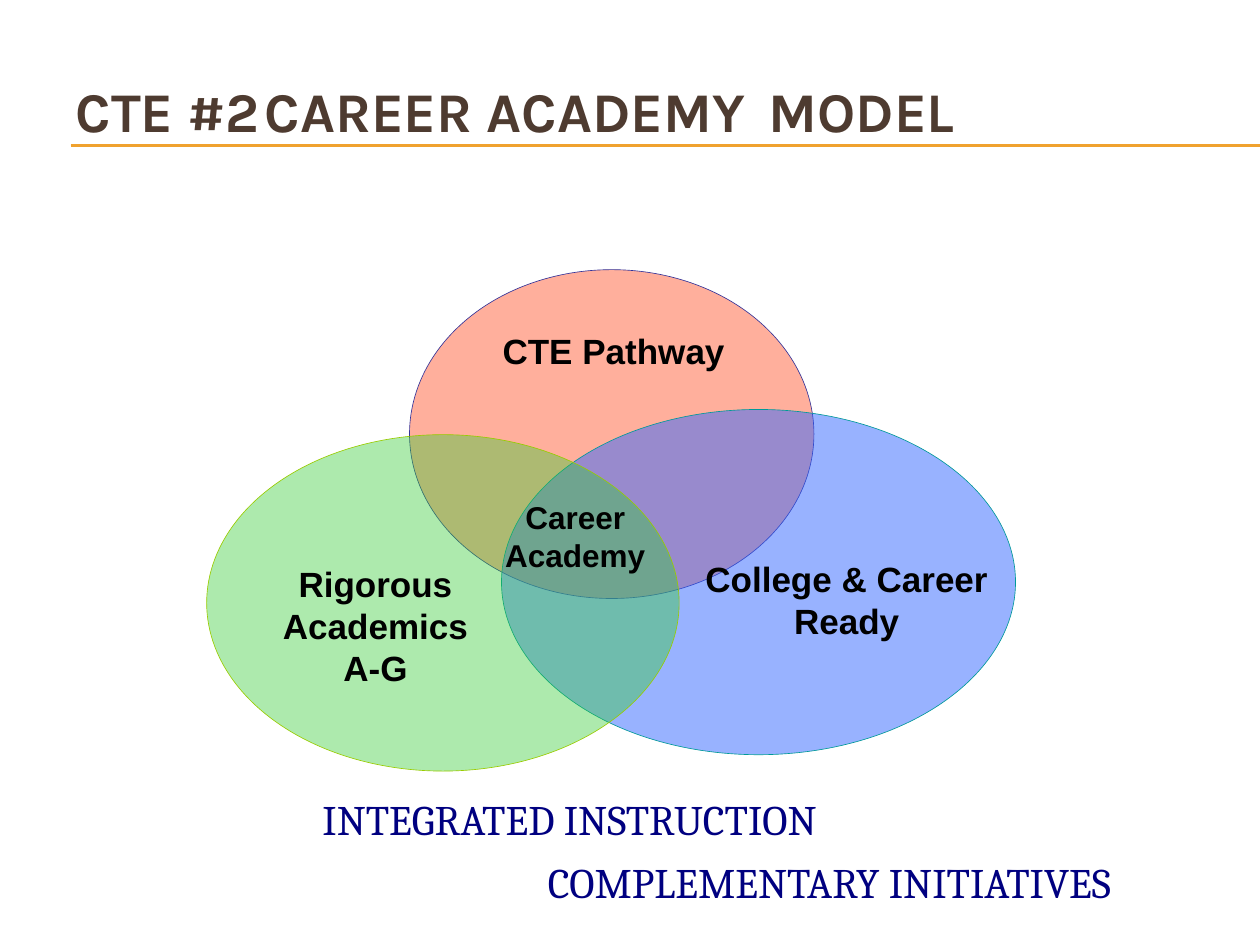
from lxml.etree import SubElement
from pptx import Presentation
from pptx.dml.color import RGBColor
from pptx.enum.shapes import MSO_CONNECTOR, MSO_SHAPE
from pptx.enum.text import MSO_ANCHOR, MSO_AUTO_SIZE, PP_ALIGN
from pptx.oxml.ns import qn
from pptx.util import Inches, Pt

BROWN = RGBColor(0x4E, 0x3B, 0x30)
GOLD = RGBColor(0xF0, 0xA2, 0x2E)
BLACK = RGBColor(0, 0, 0)
NAVY = RGBColor(0, 0, 0x80)
RED = RGBColor(0xFF, 0x33, 0x00)
BLUE = RGBColor(0x33, 0x66, 0xFF)
GREEN = RGBColor(0x33, 0xCC, 0x33)
INDIGO = RGBColor(0x33, 0x33, 0x99)
TEAL = RGBColor(0x00, 0x99, 0x99)
LIME = RGBColor(0x99, 0xCC, 0x00)

COLS, ROWS = 100, 75


class VennSlide:
    def __init__(self, prs):
        self.col = prs.slide_width / COLS
        self.row = prs.slide_height / ROWS
        self.s = prs.slides.add_slide(prs.slide_layouts[5])

    def box(self, x, y, w, h):
        return (round(x * self.col), round(y * self.row),
                round(w * self.col), round(h * self.row))

    def add_lines(self, tf, lines, font, size, color, bold, align):
        for i, line in enumerate(lines):
            p = tf.paragraphs[0] if i == 0 else tf.add_paragraph()
            p.alignment = align
            r = p.add_run()
            r.text = line
            r.font.name = font
            r.font.size = Pt(size)
            r.font.bold = bold
            r.font.color.rgb = color

    def title(self, text, at):
        sp = self.s.shapes.title
        sp.left, sp.top, sp.width, sp.height = self.box(*at)
        tf = sp.text_frame
        tf.auto_size = MSO_AUTO_SIZE.NONE
        tf.vertical_anchor = MSO_ANCHOR.MIDDLE
        self.add_lines(tf, [text], "Karla", 32, BROWN, True, PP_ALIGN.LEFT)

    def rule(self, x, y):
        left, top, width, _ = self.box(x, y, COLS - x, 0)
        cxn = self.s.shapes.add_connector(
            MSO_CONNECTOR.STRAIGHT, left, top, left + width, top)
        cxn.line.color.rgb = GOLD
        cxn.line.width = Pt(0.75)
        SubElement(cxn._element.spPr, qn("a:effectLst"))

    def ellipse(self, at, fill, opacity, outline):
        sp = self.s.shapes.add_shape(MSO_SHAPE.OVAL, *self.box(*at))
        sp.shadow.inherit = False
        sp.fill.solid()
        sp.fill.fore_color.rgb = fill
        clr = sp._element.spPr.find(qn("a:solidFill")).find(qn("a:srgbClr"))
        SubElement(clr, qn("a:alpha"), val=str(opacity * 1000))
        sp.line.color.rgb = outline
        sp.line.width = Pt(0.37)

    def label(self, lines, at, size=20):
        tf = self.s.shapes.add_textbox(*self.box(*at)).text_frame
        tf.word_wrap = True
        tf.vertical_anchor = MSO_ANCHOR.MIDDLE
        tf.margin_left = tf.margin_right = 0
        tf.margin_top = tf.margin_bottom = 0
        self.add_lines(tf, lines, "Arial", size, BLACK, True, PP_ALIGN.CENTER)

    def caption(self, text, at):
        tf = self.s.shapes.add_textbox(*self.box(*at)).text_frame
        tf.word_wrap = True
        tf.auto_size = MSO_AUTO_SIZE.SHAPE_TO_FIT_TEXT
        self.add_lines(tf, [text], "Cambria", 24, NAVY, False, PP_ALIGN.LEFT)


def main():
    prs = Presentation()
    prs.slide_width, prs.slide_height = Inches(10), Inches(7.5)
    venn = VennSlide(prs)

    for y in (11.5, 11.6):
        venn.rule(5.6, y)
    venn.title("CTE #2\tCAREER ACADEMY\tMODEL", (5, 2.5, 85.3, 12.5))

    venn.ellipse((32.5, 21.4, 32.1, 26.1), RED, 39, INDIGO)
    venn.label(["CTE Pathway"], (38.3, 23.2, 20.8, 9.3))
    venn.ellipse((39.8, 32.5, 40.8, 27.4), BLUE, 50, TEAL)
    venn.label(["College & Career Ready"], (55.8, 42.3, 22.8, 10.6))
    venn.ellipse((16.4, 34.5, 37.5, 26.7), GREEN, 40, LIME)
    venn.label(["Career Academy"], (39.7, 39.1, 11.9, 6.8), size=18)
    venn.label(["Rigorous", "Academics", "A-G"], (20.2, 44.2, 19.2, 10.9))

    venn.caption("INTEGRATED INSTRUCTION", (24.6, 62.5, 51.2, 5))
    venn.caption("COMPLEMENTARY INITIATIVES", (42.5, 67.5, 55, 5))

    prs.save("out.pptx")


if __name__ == "__main__":
    main()
